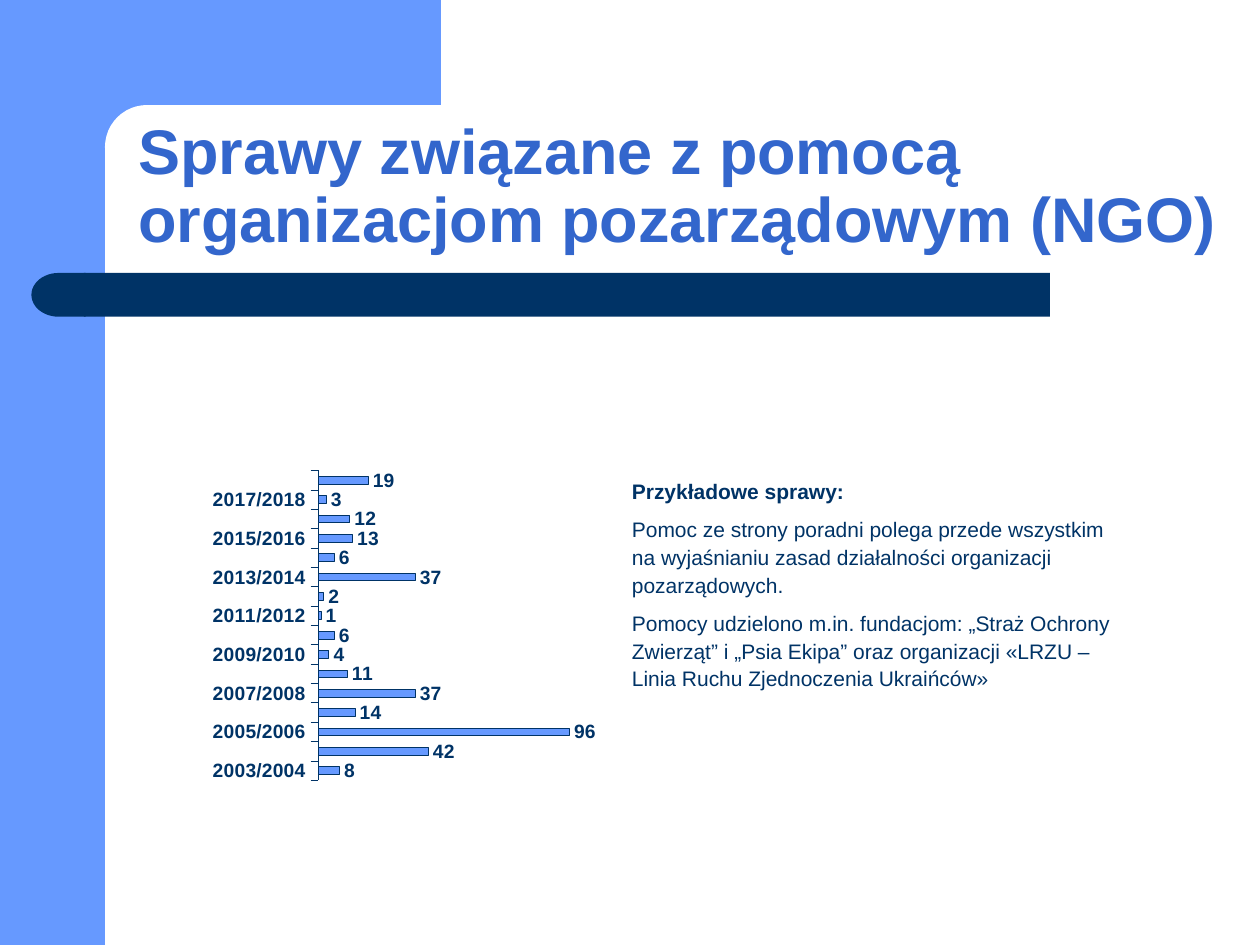
"""Build a slide on cases of help for non-governmental organisations."""
from lxml.etree import SubElement
from pptx import Presentation
from pptx.chart.data import CategoryChartData
from pptx.dml.color import RGBColor
from pptx.enum.chart import XL_CHART_TYPE, XL_LABEL_POSITION, XL_TICK_LABEL_POSITION, XL_TICK_MARK
from pptx.enum.shapes import MSO_SHAPE
from pptx.enum.text import MSO_ANCHOR
from pptx.oxml.ns import qn
from pptx.util import Pt

COLORS = {"blue": "6699FF", "navy": "003366", "title": "3366CC", "white": "FFFFFF"}
FONT = "Arial"
TITLE = "Sprawy związane z pomocą organizacjom pozarządowym (NGO)"
HEADING = "Przykładowe sprawy:"
BODY = [
    "Pomoc ze strony poradni polega przede wszystkim na wyjaśnianiu zasad działalności "
    "organizacji pozarządowych.",
    "Pomocy udzielono m.in. fundacjom: „Straż Ochrony Zwierząt” i „Psia Ekipa” oraz "
    "organizacji «LRZU – Linia Ruchu Zjednoczenia Ukraińców»",
]
FIRST_YEAR = 2003
CASES = [8, 42, 96, 14, 37, 11, 4, 6, 1, 2, 37, 6, 13, 12, 3, 19]
DECORATIONS = [
    (MSO_SHAPE.RECTANGLE, (0, 0, 60, 540), "blue", None),
    (MSO_SHAPE.RECTANGLE, (54, 0, 198, 84), "blue", None),
    (MSO_SHAPE.ROUNDED_RECTANGLE, (60, 60, 402, 48), "white", 0.5),
    (MSO_SHAPE.RECTANGLE, (48, 156, 552, 25), "navy", None),
    (MSO_SHAPE.FLOWCHART_DELAY, (18, 156, 31, 25), "navy", None),
]
TITLE_BOX = (72, 60, 648, 90)
BODY_BOX = (354, 270, 294.5, 132.5)
CHART_BOX = (93.6, 252.7, 311.8, 206.6)
PLOT_AREA = {"x": 0.283, "y": 0.078, "w": 0.575, "h": 0.857}


def color(name):
    return RGBColor.from_string(COLORS[name])


def points(box):
    return [Pt(length) for length in box]


def style_font(font, size, color_name, bold):
    font.name, font.size, font.bold = FONT, Pt(size), bold
    font.color.rgb = color(color_name)


def add_decoration(slide, kind, box, color_name, rounding):
    shape = slide.shapes.add_shape(kind, *points(box))
    shape.shadow.inherit = False
    shape.fill.solid()
    shape.fill.fore_color.rgb = color(color_name)
    shape.line.fill.background()
    if rounding is not None:
        shape.adjustments[0] = rounding
    if kind == MSO_SHAPE.FLOWCHART_DELAY:
        shape._element.spPr.find(qn("a:xfrm")).set("flipH", "1")


def add_text(slide, box, texts, size, color_name, line_spacing, anchor):
    text_frame = slide.shapes.add_textbox(*points(box)).text_frame
    text_frame.word_wrap = True
    text_frame.vertical_anchor = anchor
    text_frame.text = "\n".join(texts)
    for index, paragraph in enumerate(text_frame.paragraphs):
        first = index == 0
        paragraph.space_before = Pt(0 if first else 6)
        paragraph.line_spacing = line_spacing[min(index, 1)]
        style_font(paragraph.runs[0].font, size, color_name, first)


def place_plot(chart):
    plot_area = chart._chartSpace.chart.plotArea
    layout = plot_area.find(qn("c:layout"))
    if layout is None:
        layout = SubElement(plot_area, qn("c:layout"))
        plot_area.insert(0, layout)
    manual = SubElement(layout, qn("c:manualLayout"))
    settings = {"layoutTarget": "inner", "xMode": "edge", "yMode": "edge", **PLOT_AREA}
    for tag, value in settings.items():
        SubElement(manual, qn(f"c:{tag}")).set("val", str(value))


def add_cases_chart(slide):
    data = CategoryChartData()
    data.categories = [f"{year}/{year + 1}" for year in range(FIRST_YEAR, FIRST_YEAR + len(CASES))]
    data.add_series("Sprawy", CASES)
    chart = slide.shapes.add_chart(XL_CHART_TYPE.BAR_CLUSTERED, *points(CHART_BOX), data).chart
    chart.has_legend = chart.has_title = False
    style_font(chart.font, 11, "navy", True)

    value_axis, category_axis = chart.value_axis, chart.category_axis
    value_axis.minimum_scale, value_axis.maximum_scale = 0, 120
    value_axis.has_major_gridlines = value_axis.visible = False
    category_axis.major_tick_mark = XL_TICK_MARK.OUTSIDE
    category_axis.tick_label_position = XL_TICK_LABEL_POSITION.LOW
    style_font(category_axis.tick_labels.font, 11, "navy", True)

    plot = chart.plots[0]
    plot.gap_width, plot.vary_by_categories = 150, False
    series = plot.series[0]
    series.format.fill.solid()
    series.format.fill.fore_color.rgb = color("blue")
    for line, width in ((category_axis.format.line, 0.18), (series.format.line, 0.25)):
        line.color.rgb = color("navy")
        line.width = Pt(width)
    labels = series.data_labels
    labels.show_value = True
    labels.position = XL_LABEL_POSITION.OUTSIDE_END
    style_font(labels.font, 11, "navy", True)
    place_plot(chart)


def main():
    presentation = Presentation()
    presentation.slide_width, presentation.slide_height = Pt(720), Pt(540)
    slide = presentation.slides.add_slide(presentation.slide_layouts[6])
    for decoration in DECORATIONS:
        add_decoration(slide, *decoration)
    add_text(slide, TITLE_BOX, [TITLE], 36, "title", (0.9, 0.9), MSO_ANCHOR.BOTTOM)
    add_text(slide, BODY_BOX, [HEADING, *BODY], 12, "navy", (1.0, 1.1), MSO_ANCHOR.TOP)
    add_cases_chart(slide)
    presentation.save("out.pptx")


if __name__ == "__main__":
    main()
